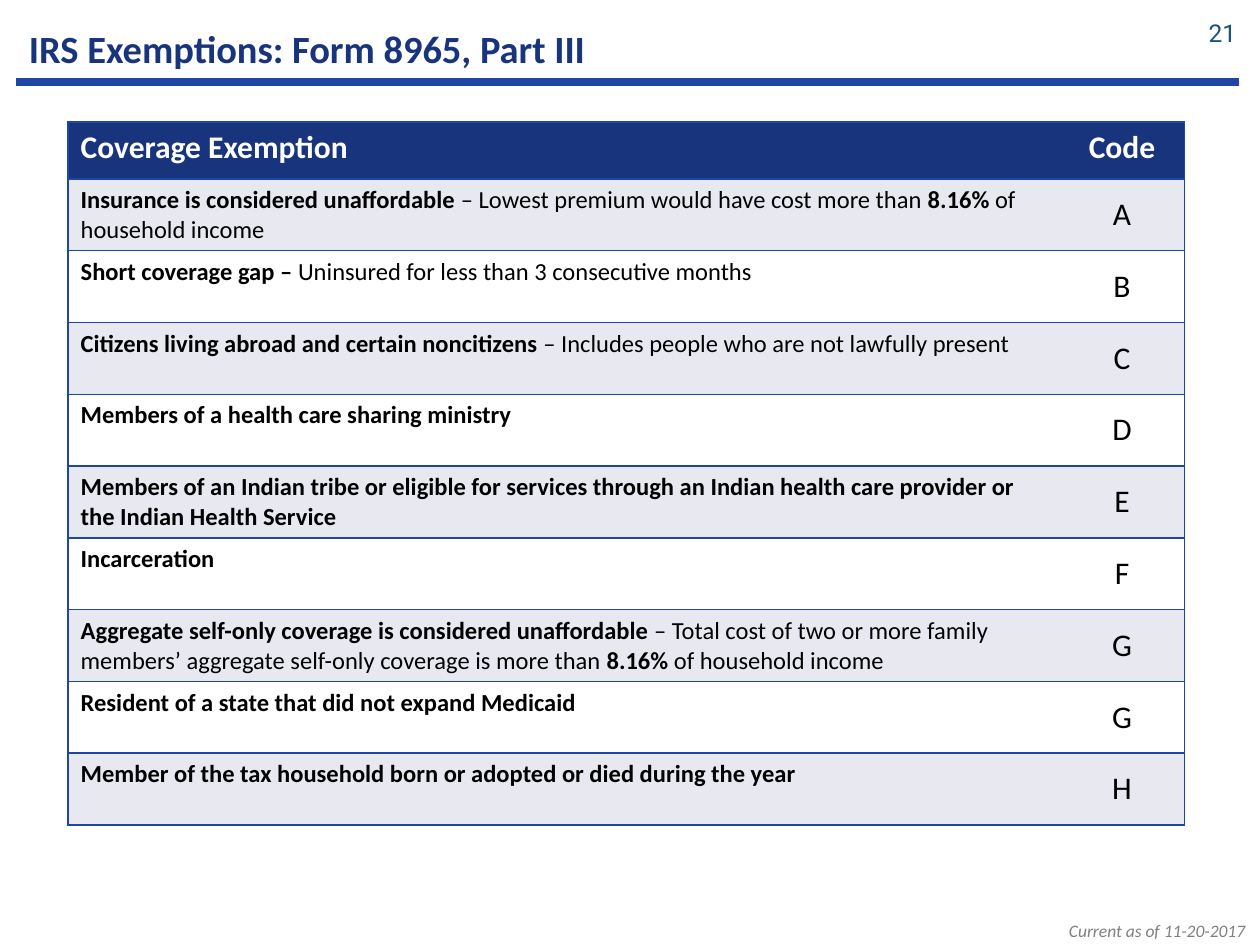
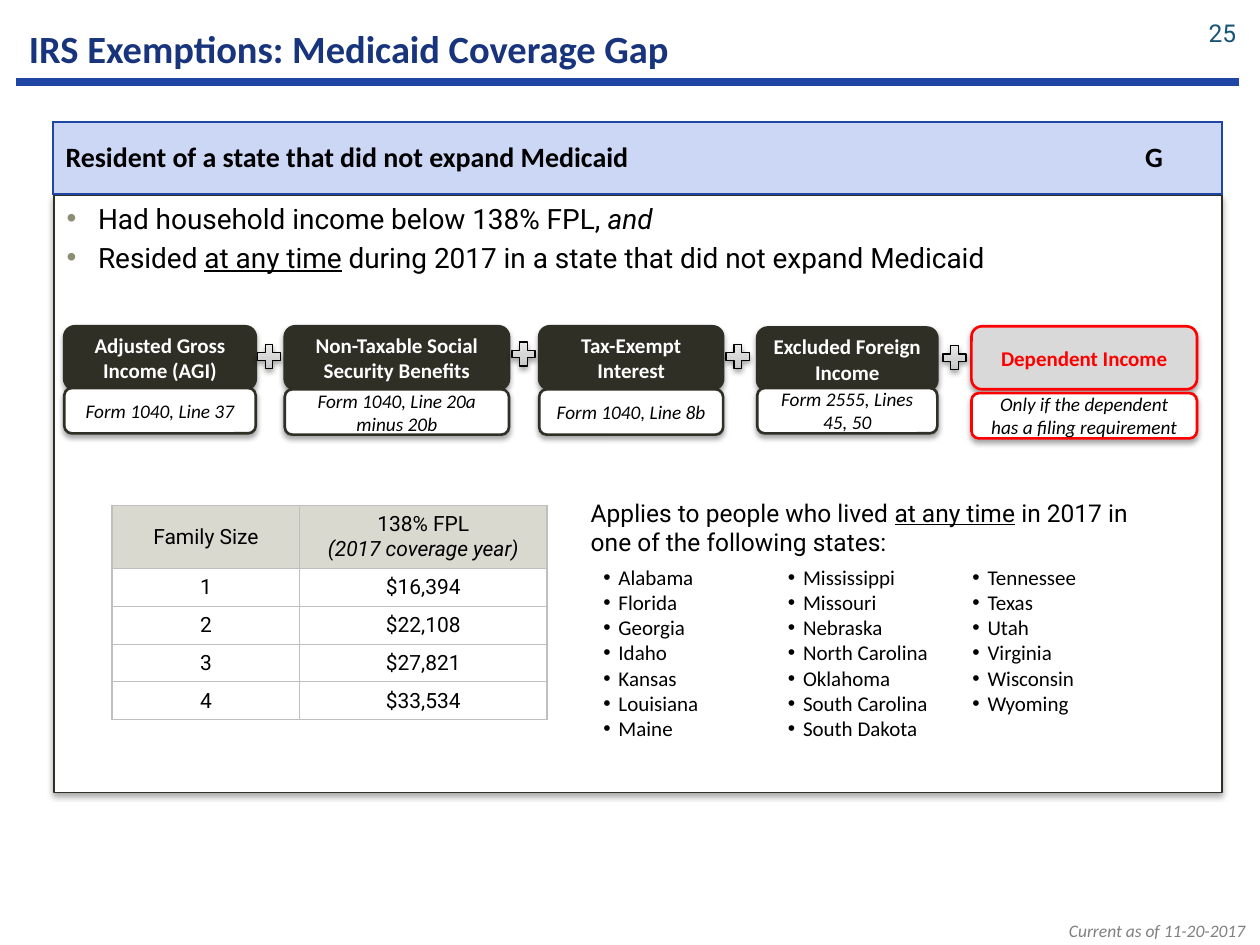
import pptx
import pptx.util
import pptx.dml.color
import pptx.enum.shapes
import pptx.enum.text
import pptx.oxml
import pptx.oxml.ns

Inches = pptx.util.Inches
Pt = pptx.util.Pt
RGBColor = pptx.dml.color.RGBColor
SHAPE = pptx.enum.shapes.MSO_SHAPE
ALIGN = pptx.enum.text.PP_ALIGN
ANCHOR = pptx.enum.text.MSO_ANCHOR
qn = pptx.oxml.ns.qn
NS = pptx.oxml.ns.nsdecls("a")

NAVY = RGBColor(0x18, 0x34, 0x7C)
BLUE = RGBColor(0x20, 0x46, 0xA5)
PALE_BLUE = RGBColor(0xCB, 0xD7, 0xF5)
BAND = RGBColor(0xE8, 0xE9, 0xF0)
TEAL = RGBColor(0x17, 0x54, 0x75)
DARK = RGBColor(0x2F, 0x2F, 0x26)
OLIVE = RGBColor(0x8D, 0x8D, 0x72)
STONE = RGBColor(0xD9, 0xD9, 0xD0)
LIGHT_GRAY = RGBColor(0xD9, 0xD9, 0xD9)
MID_GRAY = RGBColor(0xBF, 0xBF, 0xBF)
GRAY = RGBColor(0x80, 0x80, 0x80)
RED = RGBColor(0xFF, 0x00, 0x00)
WHITE = RGBColor(0xFF, 0xFF, 0xFF)
BLACK = RGBColor(0x00, 0x00, 0x00)


def write(tf, paras, size, color=BLACK, font="Calibri", align=ALIGN.LEFT,
          anchor=ANCHOR.TOP, bullet=None, indent=0, space=0):
    """Each paragraph is a list of (text, style); style letters are b, i and u."""
    tf.word_wrap = True
    tf.vertical_anchor = anchor
    for i, runs in enumerate(paras):
        p = tf.paragraphs[0] if i == 0 else tf.add_paragraph()
        p.alignment = align
        if i and space:
            p.space_before = Pt(space)
        if bullet is not None:
            pPr = p._p.get_or_add_pPr()
            pPr.set("marL", str(Inches(indent)))
            pPr.set("indent", str(-Inches(indent)))
            for xml in (f'<a:buClr {NS}><a:srgbClr val="{bullet}"/></a:buClr>',
                        f'<a:buFont {NS} typeface="Arial"/>',
                        f'<a:buChar {NS} char="•"/>'):
                pPr.append(pptx.oxml.parse_xml(xml))
        for text, style in runs:
            r = p.add_run()
            r.text = text
            r.font.name = font
            r.font.size = Pt(size)
            r.font.color.rgb = color
            r.font.bold = "b" in style
            r.font.italic = "i" in style
            r.font.underline = "u" in style


def add_box(s, kind, x, y, w, h, fill, line, weight):
    """Outlined shape with a soft shadow straight below."""
    sp = s.shapes.add_shape(kind, Inches(x), Inches(y), Inches(w), Inches(h))
    sp.fill.solid()
    sp.fill.fore_color.rgb = fill
    sp.line.color.rgb = line
    sp.line.width = Pt(weight)
    sp.shadow.inherit = False
    sp.element.spPr.find(qn("a:effectLst")).append(pptx.oxml.parse_xml(
        f'<a:outerShdw {NS} blurRad="{Pt(3.1)}" dist="{Pt(1.8)}" dir="5400000" '
        'rotWithShape="0"><a:srgbClr val="000000"><a:alpha val="35000"/>'
        '</a:srgbClr></a:outerShdw>'))
    return sp


prs = pptx.Presentation()
prs.slide_width = Inches(10)
prs.slide_height = Inches(7.5)

# Shared frame: footer, rule, title, page number
slides = []
for title, number in (("IRS Exemptions: Form 8965, Part III", "21"),
                      ("IRS Exemptions: Medicaid Coverage Gap", "25")):
    s = prs.slides.add_slide(prs.slide_layouts[5])
    slides.append(s)
    sp = s.shapes.title
    sp.left, sp.top, sp.width, sp.height = map(Inches, (0.13, 0.1, 9, 0.57))
    write(sp.text_frame, [[(title, "b")]], 22, NAVY, anchor=ANCHOR.MIDDLE)

    sp = s.shapes.add_textbox(Inches(5.97), Inches(7.25), Inches(4.01), Inches(0.27))
    write(sp.text_frame, [[("Current as of 11-20-2017", "i")]], 10, GRAY,
          align=ALIGN.RIGHT)
    rule = s.shapes.add_connector(pptx.enum.shapes.MSO_CONNECTOR.STRAIGHT,
                                  Inches(0.13), Inches(0.65), Inches(9.83), Inches(0.65))
    rule.line.color.rgb = BLUE
    rule.line.width = Pt(4.75)
    rule.element.spPr.append(pptx.oxml.parse_xml(f"<a:effectLst {NS}/>"))
    sp = s.shapes.add_textbox(Inches(9.4), Inches(0.06), Inches(0.51), Inches(0.4))
    write(sp.text_frame, [[(number, "")]], 14, TEAL, "Roboto", ALIGN.RIGHT,
          ANCHOR.MIDDLE)
exemptions_slide, gap_slide = slides

# Slide 1: exemptions and their codes
exemptions = [
    ("A", [("Insurance is considered unaffordable ", "b"),
           ("– Lowest premium would have cost more than ", ""),
           ("8.16%", "b"), (" of household income", "")]),
    ("B", [("Short coverage gap – ", "b"),
           ("Uninsured for less than 3 consecutive months", "")]),
    ("C", [("Citizens living abroad and certain noncitizens ", "b"),
           ("– Includes people who are not lawfully present", "")]),
    ("D", [("Members of a health care sharing ministry", "b")]),
    ("E", [("Members of an Indian tribe or eligible for services through an Indian "
            "health care provider or the Indian Health Service", "b")]),
    ("F", [("Incarceration", "b")]),
    ("G", [("Aggregate self-only coverage is considered unaffordable ", "b"),
           ("– Total cost of two or more family members’ aggregate self-only "
            "coverage is more than ", ""),
           ("8.16% ", "b"), ("of household income", "")]),
    ("G", [("Resident of a state that did not expand Medicaid", "b")]),
    ("H", [("Member of the tax household born or adopted or died during the year", "b")]),
]

# Slide 2: panel with the two conditions
s = gap_slide
sp = add_box(s, SHAPE.RECTANGLE, 0.43, 1.55, 9.27, 4.74, WHITE, DARK, 1)
write(sp.text_frame,
      [[("Had household income below 138% FPL, ", ""), ("and", "i")],
       [("Resided ", ""), ("at any time", "u"),
        (" during 2017 in a state that did not expand Medicaid", "")]],
      16, font="Roboto", bullet=OLIVE, indent=0.25, space=3)

# Income parts: head above, tax form line below
parts = [
    (0.51, 1.52, 2.59, 3.08, ["Adjusted Gross Income (AGI)"], "Form 1040, Line 37"),
    (2.26, 1.78, 2.59, 3.09, ["Non-Taxable Social Security Benefits"],
     "Form 1040, Line 20a minus 20b"),
    (4.28, 1.46, 2.59, 3.09, ["Tax-Exempt", "Interest"], "Form 1040, Line 8b"),
    (6.01, 1.43, 2.6, 3.08, ["Excluded Foreign Income"], "Form 2555, Lines 45, 50"),
    (7.71, 1.79, 2.59, 3.12, ["Dependent Income"],
     "Only if the dependent has a filing requirement"),
]
for x, w, head_y, form_y, head, form in parts:
    fill, line, color = DARK, DARK, WHITE
    if head == ["Dependent Income"]:
        fill, line, color = LIGHT_GRAY, RED, RED
    sp = add_box(s, SHAPE.ROUNDED_RECTANGLE, x, head_y, w, 0.5, fill, line, 1.5)
    write(sp.text_frame, [[(text, "b")] for text in head], 12, color,
          align=ALIGN.CENTER, anchor=ANCHOR.MIDDLE)
    sp = add_box(s, SHAPE.ROUNDED_RECTANGLE, x, form_y, w, 0.36, WHITE, line, 1.5)
    write(sp.text_frame, [[(form, "i")]], 11, align=ALIGN.CENTER, anchor=ANCHOR.MIDDLE)

# Plus signs between the parts
for x, y in ((2.01, 2.7), (4.03, 2.68), (5.73, 2.7), (7.45, 2.71)):
    sp = add_box(s, SHAPE.MATH_PLUS, x, y, 0.25, 0.26, LIGHT_GRAY, BLACK, 0.75)
    solid = sp.element.spPr.find(qn("a:solidFill"))
    stops = "".join(f'<a:gs pos="{pos}"><a:srgbClr val="{val}"/></a:gs>' for pos, val in
                    ((0, "BDBDBD"), (35000, "D1D1D1"), (100000, "EEEEEE")))
    solid.addprevious(pptx.oxml.parse_xml(
        f'<a:gradFill {NS} rotWithShape="1"><a:gsLst>{stops}</a:gsLst>'
        '<a:lin ang="16200000" scaled="0"/></a:gradFill>'))
    sp.element.spPr.remove(solid)

# States in three columns
sp = s.shapes.add_textbox(Inches(4.59), Inches(3.9), Inches(4.67), Inches(0.57))
write(sp.text_frame, [[("Applies to people who lived ", ""), ("at any time", "u"),
                       (" in 2017 in one of the following states:", "")]],
      14, font="Roboto")
states = ["Alabama", "Florida", "Georgia", "Idaho", "Kansas", "Louisiana", "Maine",
          "Mississippi", "Missouri", "Nebraska", "North Carolina", "Oklahoma",
          "South Carolina", "South Dakota", "Tennessee", "Texas", "Utah", "Virginia",
          "Wisconsin", "Wyoming"]
sp = s.shapes.add_textbox(Inches(4.69), Inches(4.43), Inches(4.59), Inches(1.51))
write(sp.text_frame, [[(state, "")] for state in states], 12, bullet=BLACK, indent=0.12)
sp.text_frame.auto_size = pptx.enum.text.MSO_AUTO_SIZE.SHAPE_TO_FIT_TEXT
sp.element.txBody.bodyPr.set("numCol", "3")

# Table rows: height, fill, text colour, then cells of (paragraphs, size, align, anchor)
LEFT, CENTER, TOP, MIDDLE = ALIGN.LEFT, ALIGN.CENTER, ANCHOR.TOP, ANCHOR.MIDDLE
exemption_rows = [(0.45, NAVY, WHITE, [([[("Coverage Exemption", "b")]], 18, LEFT, TOP),
                                       ([[("Code", "b")]], 18, CENTER, TOP)])]
for i, (code, runs) in enumerate(exemptions):
    exemption_rows.append((0.57, WHITE if i % 2 else BAND, BLACK,
                           [([runs], 14, LEFT, TOP),
                            ([[(code, "")]], 18, CENTER, MIDDLE)]))
heading_rows = [(0.57, PALE_BLUE, BLACK, [
    ([[("Resident of a state that did not expand Medicaid", "b")]], 16, LEFT, MIDDLE),
    ([[("G", "b")]], 16, CENTER, MIDDLE)])]
limit_rows = [(0.5, STONE, BLACK, [
    ([[("Family Size", "")]], 12, CENTER, MIDDLE),
    ([[("138% FPL", "")], [("(2017 coverage year)", "i")]], 12, CENTER, MIDDLE)])]
for family, limit in enumerate(("$16,394", "$22,108", "$27,821", "$33,534"), 1):
    limit_rows.append((0.3, WHITE, BLACK, [([[(text, "")]], 12, CENTER, MIDDLE)
                                           for text in (str(family), limit)]))

# Tables: slide, left, top, columns, font, border colour, row line, column line, rows
for s, x, y, cols, font, border, row_line, col_line, rows in (
        (exemptions_slide, 0.54, 0.97, (7.87, 0.99), "Calibri", BLUE, 1, 0,
         exemption_rows),
        (gap_slide, 0.42, 0.97, (8.2, 1.08), "Calibri", BLUE, 1, 0, heading_rows),
        (gap_slide, 0.89, 4.01, (1.49, 1.96), "Roboto", MID_GRAY, 0.5, 0.5,
         limit_rows)):
    height = sum(row[0] for row in rows)
    tbl = s.shapes.add_table(len(rows), len(cols), Inches(x), Inches(y),
                             Inches(sum(cols)), Inches(height)).table
    tbl.first_row = tbl.horz_banding = False
    for col, width in zip(tbl.columns, cols):
        col.width = Inches(width)
    for i, (height, fill, color, cells) in enumerate(rows):
        tbl.rows[i].height = Inches(height)
        for j, (paras, size, align, anchor) in enumerate(cells):
            cell = tbl.cell(i, j)
            cell.fill.solid()
            cell.fill.fore_color.rgb = fill
            write(cell.text_frame, paras, size, color, font, align)
            cell.vertical_anchor = anchor
            widths = (col_line if j else 1, 1 if j == len(cols) - 1 else col_line,
                      row_line, 1 if i == len(rows) - 1 else row_line)
            tcPr = cell._tc.get_or_add_tcPr()
            for k, (side, width) in enumerate(zip("LRTB", widths)):
                paint = (f'<a:solidFill><a:srgbClr val="{border}"/></a:solidFill>'
                         if width else "<a:noFill/>")
                tcPr.insert(k, pptx.oxml.parse_xml(
                    f'<a:ln{side} {NS} w="{Pt(width)}">{paint}</a:ln{side}>'))

prs.save("out.pptx")
